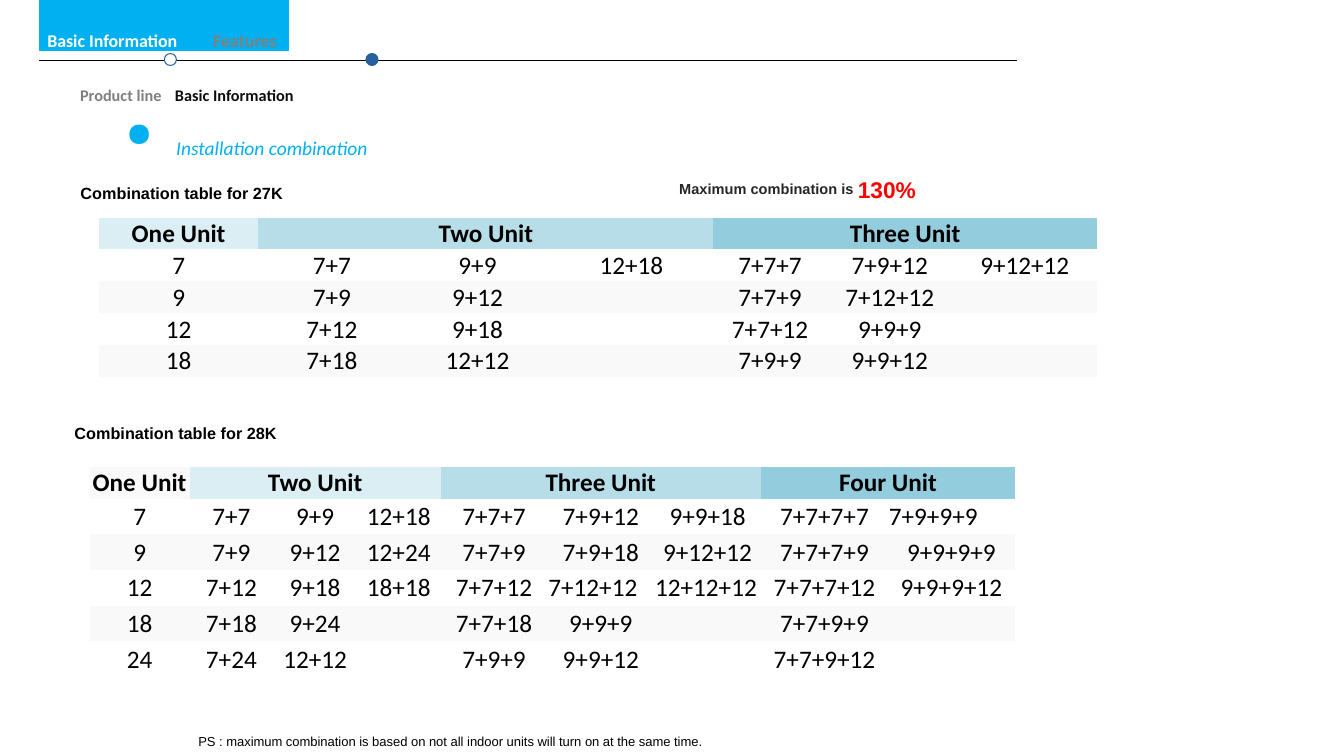
from dataclasses import dataclass

from lxml import etree
from pptx import Presentation
from pptx.dml.color import RGBColor
from pptx.enum.shapes import MSO_CONNECTOR, MSO_SHAPE
from pptx.enum.text import MSO_ANCHOR, MSO_AUTO_SIZE, PP_ALIGN
from pptx.oxml.ns import qn
from pptx.util import Pt

LINE = MSO_CONNECTOR.STRAIGHT
DOT, BAND = MSO_SHAPE.OVAL, MSO_SHAPE.FLOWCHART_PROCESS
TOP, MID = MSO_ANCHOR.TOP, MSO_ANCHOR.MIDDLE
LEFT, MIDDLE = PP_ALIGN.LEFT, PP_ALIGN.CENTER
FIXED = MSO_AUTO_SIZE.NONE
PLAIN = "{2D5ABB26-0587-4C30-8999-92F81FD0307C}"


@dataclass(frozen=True)
class Theme:
    black: str = "000000"
    dark: str = "262626"
    ink: str = "0D0D0D"
    grey: str = "808080"
    white: str = "FFFFFF"
    pale: str = "F9F9F9"
    sky: str = "00B0F0"
    blue: str = "29609D"
    red: str = "FF0000"
    tints: tuple = ("DBEEF4", "B7DEE8", "93CDDD")
    body: str = "Calibri"
    sans: str = "Arial"
    note: int = 16
    cell: int = 18
    label: int = 20
    head: int = 22
    topic: int = 24
    big: int = 28


def put(item, values):
    for name, value in values.items():
        setattr(item, name, value)


class Board:
    def __init__(self, theme, slide):
        self.theme = theme
        self.slide = slide
        self.shapes = slide.shapes

    def style(self, font, size, color, face, bold=False, italic=False):
        put(font, {"size": Pt(size), "name": face, "bold": bold, "italic": italic})
        font.color.rgb = RGBColor.from_string(color)

    def line(self, x1, y1, x2, y2, color):
        line = self.shapes.add_connector(LINE, Pt(x1), Pt(y1), Pt(x2), Pt(y2))
        line.line.color.rgb = RGBColor.from_string(color)
        line.line.width = Pt(0.75)
        etree.SubElement(line._element.spPr, qn("a:effectLst"))

    def shape(self, kind, x, y, w, h, fill, edge):
        shape = self.shapes.add_shape(kind, Pt(x), Pt(y), Pt(w), Pt(h))
        shape.shadow.inherit = False
        shape.fill.solid()
        shape.fill.fore_color.rgb = RGBColor.from_string(fill)
        shape.line.color.rgb = RGBColor.from_string(edge)
        shape.line.width = Pt(0.75)

    def text(self, x, y, w, h, runs, face, inset=7.2, tab=None, bullet=None, gap=None,
             bold=True, italic=False):
        box = self.shapes.add_textbox(Pt(x), Pt(y), Pt(w), Pt(h))
        self.label(box, runs, face, inset, tab, bullet, gap, bold, italic)

    def title(self, x, y, w, h, runs, face, tab):
        box = self.shapes.title
        put(box, {"left": Pt(x), "top": Pt(y), "width": Pt(w), "height": Pt(h)})
        self.label(box, runs, face, 7.2, tab)
        box._element.getparent().append(box._element)

    def label(self, box, runs, face, inset, tab=None, bullet=None, gap=None,
              bold=True, italic=False):
        frame = box.text_frame
        put(frame, {"word_wrap": True, "auto_size": FIXED, "vertical_anchor": TOP,
                    "margin_left": Pt(inset), "margin_right": Pt(7.2),
                    "margin_top": Pt(3.6), "margin_bottom": Pt(3.6)})
        para = frame.paragraphs[0]
        para.alignment = LEFT
        if gap:
            para.line_spacing = Pt(gap)
        props = para._p.get_or_add_pPr()
        if bullet:
            props.set("marL", str(Pt(36)))
            props.set("indent", str(-Pt(36)))
            etree.SubElement(props, qn("a:buChar"), char=bullet)
        if tab:
            tabs = etree.SubElement(props, qn("a:tabLst"))
            etree.SubElement(tabs, qn("a:tab"), pos=str(Pt(tab)), algn="l")
        for words, size, color in runs:
            run = para.add_run()
            run.text = words
            self.style(run.font, size, color, face, bold, italic)
            run._r.get_or_add_rPr().set("baseline", "-25000")

    def table(self, x, y, cols, rows, heads, data, left=()):
        theme = self.theme
        frame = self.shapes.add_table(len(rows), len(cols), Pt(x), Pt(y),
                                      Pt(sum(cols)), Pt(sum(rows)))
        table = frame.table
        put(table, {"first_row": False, "horz_banding": False})
        table._tbl.tblPr.find(qn("a:tableStyleId")).text = PLAIN
        for col, width in zip(table.columns, cols):
            col.width = Pt(width)
        for row, height in zip(table.rows, rows):
            row.height = Pt(height)
        col = 0
        for words, span, fill in heads:
            cell = table.cell(0, col)
            if span > 1:
                cell.merge(table.cell(0, col + span - 1))
            self.cell(cell, words, fill, True)
            col += span
        for r, line in enumerate(data, 1):
            fill = theme.white if r % 2 else theme.pale
            for c, words in enumerate(line):
                self.cell(table.cell(r, c), words, fill, False,
                          LEFT if words in left else MIDDLE)

    def cell(self, cell, words, fill, bold, align=MIDDLE):
        cell.fill.solid()
        cell.fill.fore_color.rgb = RGBColor.from_string(fill)
        put(cell, {"text": words, "vertical_anchor": MID, "margin_left": Pt(0.72),
                   "margin_right": Pt(0.72), "margin_top": Pt(0.72), "margin_bottom": 0})
        para = cell.text_frame.paragraphs[0]
        para.alignment = align
        theme = self.theme
        font = para.runs[0].font if para.runs else para.font
        self.style(font, theme.cell, theme.black, theme.body, bold)


def main():
    deck = Presentation()
    put(deck, {"slide_width": Pt(960), "slide_height": Pt(540)})
    t = Theme()
    board = Board(t, deck.slides.add_slide(deck.slide_layouts[5]))

    board.line(28.1, 43.2, 726.5, 43.2, t.black)
    board.text(36, 43.9, 595.4, 31.7,
               [("Product line\t", t.label, t.grey), ("Basic Information", t.label, t.ink)],
               t.body, inset=21.2, tab=67.8)
    for x, fill in ((261.4, t.blue), (117.4, t.white)):
        board.shape(DOT, x, 38.2, 8.6, 8.6, fill, t.blue)
    board.text(82.8, 77.8, 289.4, 36, [("Installation combination", t.topic, t.sky)],
               t.body, bullet="●", bold=False, italic=True)

    board.table(
        70.6, 155.5, [114, 105, 103, 117, 81, 90, 103], [22.3] * 5,
        [("One Unit", 1, t.tints[0]), ("Two Unit", 3, t.tints[1]),
         ("Three Unit", 3, t.tints[2])],
        [["7", "7+7", "9+9", "12+18", "7+7+7", "7+9+12", "9+12+12"],
         ["9", "7+9", "9+12", "", "7+7+9", "7+12+12", ""],
         ["12", "7+12", "9+18", "", "7+7+12", "9+9+9", ""],
         ["18", "7+18", "12+12", "", "7+9+9", "9+9+12", ""]])
    for x, y, model in ((50.4, 129.6, "27K"), (46.1, 301, "28K")):
        board.text(x, y, 431.3, 19.4,
                   [(f"Combination table for {model}", t.label, t.black)], t.sans, gap=12)
    board.table(
        64.1, 333.4, [71.3] + [59.8] * 3 + [76.3] * 3 + [90.7] * 2, [22.3] + [25.5] * 5,
        [("One Unit", 1, t.pale), ("Two Unit", 3, t.tints[0]),
         ("Three Unit", 3, t.tints[1]), ("Four Unit", 2, t.tints[2])],
        [["7", "7+7", "9+9", "12+18", "7+7+7", "7+9+12", "9+9+18", "7+7+7+7", "7+9+9+9"],
         ["9", "7+9", "9+12", "12+24", "7+7+9", "7+9+18", "9+12+12", "7+7+7+9", "9+9+9+9"],
         ["12", "7+12", "9+18", "18+18", "7+7+12", "7+12+12", "12+12+12", "7+7+7+12",
          "9+9+9+12"],
         ["18", "7+18", "9+24", "", "7+7+18", "9+9+9", "", "7+7+9+9", ""],
         ["24", "7+24", "12+12", "", "7+9+9", "9+9+12", "", "7+7+9+12", ""]],
        left=("7+9+9+9", "7+12+12", "12+12+12"))

    board.text(478.1, 103, 360, 41,
               [("Maximum combination is ", t.cell, t.dark), ("130%", t.big, t.red)], t.sans)
    board.text(134.6, 509.8, 641.5, 26.6,
               [("PS : maximum combination is based on not all indoor units "
                 "will turn on at the same time.", t.note, t.black)], t.sans, bold=False)
    board.shape(BAND, 28.1, 0, 177.8, 36, t.sky, t.sky)
    board.title(26.6, 2.9, 699.1, 34.6,
                [("Basic Information\t", t.head, t.white), ("Features", t.head, t.grey)],
                t.body, 118.4)
    deck.save("out.pptx")


if __name__ == "__main__":
    main()
